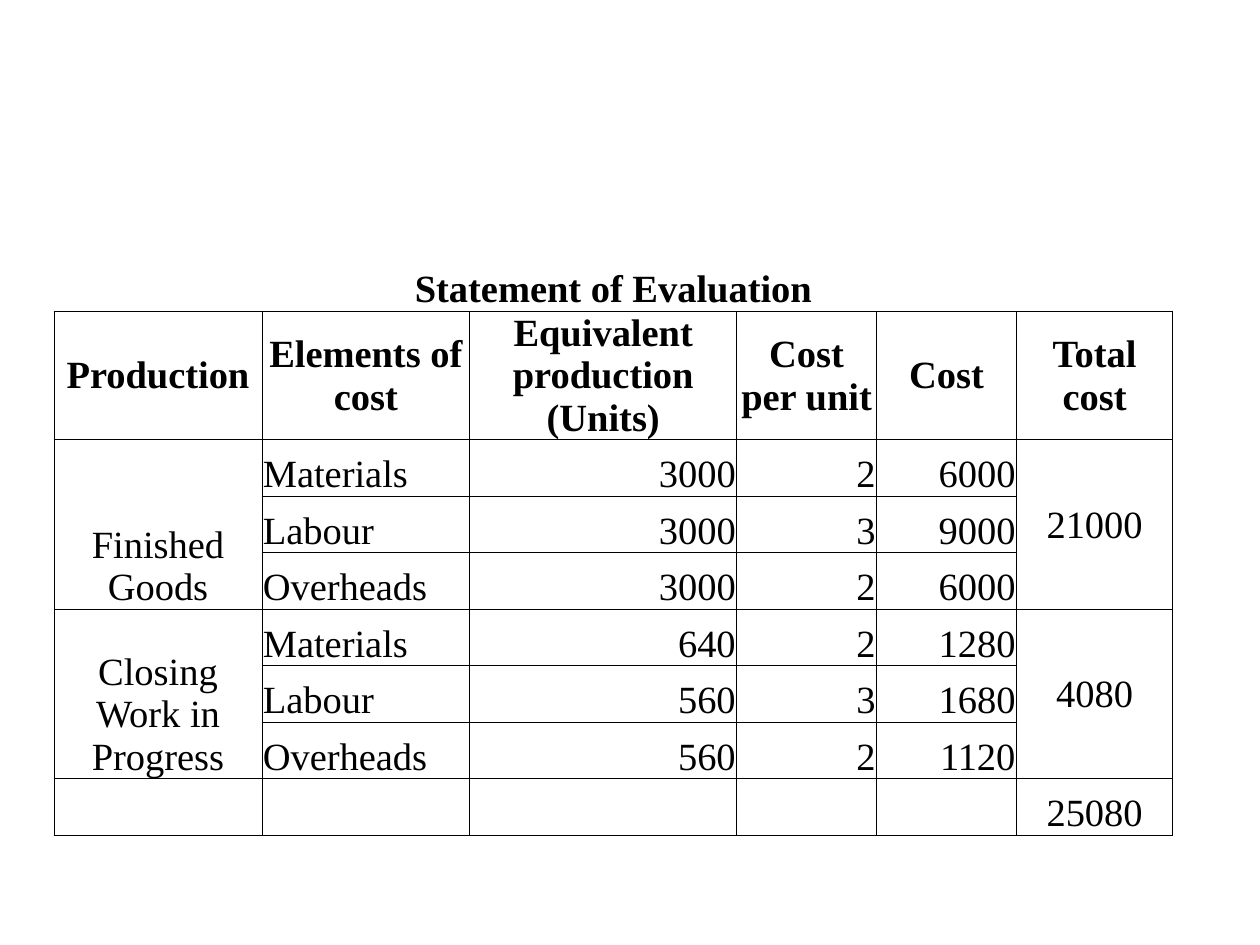
from lxml import etree
from pptx import Presentation
from pptx.dml.color import RGBColor
from pptx.enum.text import MSO_ANCHOR, PP_ALIGN
from pptx.oxml.ns import qn
from pptx.util import Cm, Pt

BLACK = RGBColor(0, 0, 0)
LEFT, CENTER, RIGHT = PP_ALIGN.LEFT, PP_ALIGN.CENTER, PP_ALIGN.RIGHT
MIDDLE, BOTTOM = MSO_ANCHOR.MIDDLE, MSO_ANCHOR.BOTTOM

COL_WIDTHS = [4.19, 4.19, 5.38, 2.82, 2.82, 3.15]
ROW_HEIGHT, HEADER_HEIGHT = 1.14, 1.9
ROWS = [
    ["Statement of Evaluation", "", "", "", "", ""],
    ["Production", "Elements of cost", "Equivalent production\n(Units)",
     "Cost per unit", "Cost", "Total cost"],
    ["Finished Goods", "Materials", "3000", "2", "6000", "21000"],
    ["", "Labour", "3000", "3", "9000", ""],
    ["", "Overheads", "3000", "2", "6000", ""],
    ["Closing Work in Progress", "Materials", "640", "2", "1280", "4080"],
    ["", "Labour", "560", "3", "1680", ""],
    ["", "Overheads", "560", "2", "1120", ""],
    ["", "", "", "", "", "25080"],
]
TITLE_ROW, HEADER_ROW, TOTAL_ROW = 0, 1, len(ROWS) - 1
BODY_ALIGN = [CENTER, LEFT, RIGHT, RIGHT, RIGHT, CENTER]
MERGES = [((0, 0), (0, 5))] + [
    ((r, c), (r + 2, c)) for r in (2, 5) for c in (0, 5)
]


class SlideBuilder:
    font = "Times New Roman"
    size = Pt(22)
    color = BLACK
    line_width = Pt(0.5)

    def __init__(self, slide):
        self.slide = slide

    def table(self, left, top, rows, col_widths, row_heights, merges):
        frame = self.slide.shapes.add_table(
            len(rows), len(col_widths), Cm(left), Cm(top),
            Cm(sum(col_widths)), Cm(sum(row_heights)))
        tbl = frame.table
        tbl.first_row = False
        tbl.horz_banding = False
        for col, width in zip(tbl.columns, col_widths):
            col.width = Cm(width)
        for row, height in zip(tbl.rows, row_heights):
            row.height = Cm(height)
        for start, end in merges:
            tbl.cell(*start).merge(tbl.cell(*end))
        return tbl

    def cell(self, cell, text, align, anchor, bold, edges):
        cell.margin_left = cell.margin_right = cell.margin_top = Cm(0.02)
        cell.margin_bottom = 0
        cell.vertical_anchor = anchor
        if text:
            cell.text = text
        for p in cell.text_frame.paragraphs:
            p.alignment = align
            for r in p.runs:
                r.font.name = self.font
                r.font.size = self.size
                r.font.bold = bold
                r.font.color.rgb = self.color
        self.borders(cell, edges)
        cell.fill.background()

    def borders(self, cell, edges):
        tc_pr = cell._tc.get_or_add_tcPr()
        for side in "LRTB":
            ln = etree.SubElement(tc_pr, qn(f"a:ln{side}"), w=str(self.line_width))
            if side in edges:
                fill = etree.SubElement(ln, qn("a:solidFill"))
                etree.SubElement(fill, qn("a:srgbClr"), val=str(self.color))
            else:
                etree.SubElement(ln, qn("a:noFill"))


def main():
    prs = Presentation()
    prs.slide_width, prs.slide_height = Cm(25.4), Cm(19.05)
    s = SlideBuilder(prs.slides.add_slide(prs.slide_layouts[6]))

    heights = [HEADER_HEIGHT if i == HEADER_ROW else ROW_HEIGHT
               for i in range(len(ROWS))]
    tbl = s.table(1.09, 5.13, ROWS, COL_WIDTHS, heights, MERGES)
    for i, row in enumerate(ROWS):
        heading = i <= HEADER_ROW
        for j, text in enumerate(row):
            group_total = j == len(row) - 1 and i != TOTAL_ROW
            centred = i == HEADER_ROW or (group_total and not heading)
            s.cell(tbl.cell(i, j), text,
                   align=CENTER if heading else BODY_ALIGN[j],
                   anchor=MIDDLE if centred else BOTTOM,
                   bold=heading,
                   edges="B" if i == TITLE_ROW else "LRTB")

    prs.save("out.pptx")


if __name__ == "__main__":
    main()
